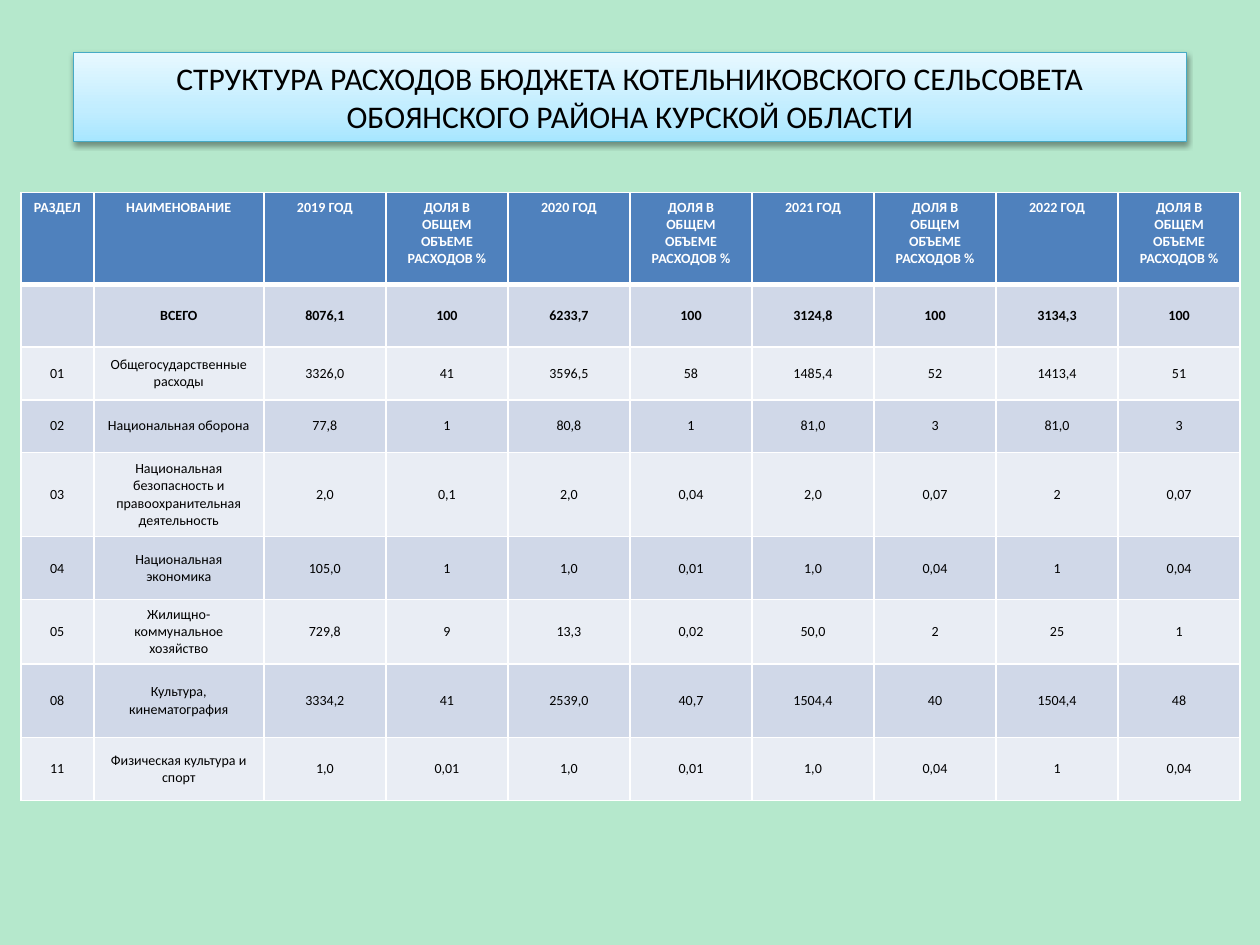
from lxml.etree import SubElement
from pptx import Presentation
from pptx.dml.color import RGBColor
from pptx.enum.text import MSO_ANCHOR, MSO_AUTO_SIZE, PP_ALIGN
from pptx.oxml import parse_xml
from pptx.oxml.ns import nsdecls, qn
from pptx.util import Cm, Pt

MINT = RGBColor(0xB5, 0xE8, 0xCC)
TEAL = RGBColor(0x46, 0xAA, 0xC5)
BLUE = RGBColor(0x4F, 0x81, 0xBD)
DARK = RGBColor(0xD0, 0xD8, 0xE8)
PALE = RGBColor(0xE9, 0xED, 0xF4)
BLACK = RGBColor(0, 0, 0)
WHITE = RGBColor(0xFF, 0xFF, 0xFF)
GLOW = [(0, RGBColor(0xA7, 0xE6, 0xFF)), (35, RGBColor(0xC1, 0xED, 0xFF)),
        (100, RGBColor(0xE7, 0xF8, 0xFF))]

TITLE = ("СТРУКТУРА РАСХОДОВ БЮДЖЕТА КОТЕЛЬНИКОВСКОГО СЕЛЬСОВЕТА "
         "ОБОЯНСКОГО РАЙОНА КУРСКОЙ ОБЛАСТИ")
SHARE = "ДОЛЯ В ОБЩЕМ ОБЪЕМЕ РАСХОДОВ %"
HEAD = ["РАЗДЕЛ", "НАИМЕНОВАНИЕ"]
for year in range(2019, 2023):
    HEAD += [f"{year} ГОД", SHARE]
ROWS = [
    HEAD,
    ["", "ВСЕГО", "8076,1", "100", "6233,7", "100", "3124,8", "100", "3134,3", "100"],
    ["01", "Общегосударственные расходы",
     "3326,0", "41", "3596,5", "58", "1485,4", "52", "1413,4", "51"],
    ["02", "Национальная оборона",
     "77,8", "1", "80,8", "1", "81,0", "3", "81,0", "3"],
    ["03", "Национальная безопасность и правоохранительная деятельность",
     "2,0", "0,1", "2,0", "0,04", "2,0", "0,07", "2", "0,07"],
    ["04", "Национальная экономика",
     "105,0", "1", "1,0", "0,01", "1,0", "0,04", "1", "0,04"],
    ["05", "Жилищно-коммунальное хозяйство",
     "729,8", "9", "13,3", "0,02", "50,0", "2", "25", "1"],
    ["08", "Культура, кинематография",
     "3334,2", "41", "2539,0", "40,7", "1504,4", "40", "1504,4", "48"],
    ["11", "Физическая культура и спорт",
     "1,0", "0,01", "1,0", "0,01", "1,0", "0,04", "1", "0,04"],
]
WIDTHS = [1.47, 3.43] + [2.46] * 8
HEIGHTS = [1.85, 1.27, 1.06, 1.06, 1.7, 1.27, 1.27, 1.48, 1.27]


class Deck:
    font = "Calibri"

    def __init__(self, width, height):
        self.prs = Presentation()
        self.prs.slide_width, self.prs.slide_height = Cm(width), Cm(height)
        self.slide = self.prs.slides.add_slide(self.prs.slide_layouts[5])
        fill = self.slide.background.fill
        fill.solid()
        fill.fore_color.rgb = MINT

    def label(self, frame, text, size, color, bold=False):
        frame.text = text
        para = frame.paragraphs[0]
        para.alignment = PP_ALIGN.CENTER
        para.font.name, para.font.size = self.font, Pt(size)
        para.font.bold, para.font.color.rgb = bold, color

    def title(self, text, left, top, width, height):
        box = self.slide.shapes.title
        box.left, box.top = Cm(left), Cm(top)
        box.width, box.height = Cm(width), Cm(height)
        self.shade(box)
        box.line.color.rgb, box.line.width = TEAL, Pt(0.75)
        self.label(box.text_frame, text, 18, BLACK)
        box.text_frame.auto_size = MSO_AUTO_SIZE.NONE

    def shade(self, box):
        """Give the box an upward gradient and a soft drop shadow."""
        stops = "".join(f'<a:gs pos="{pos * 1000}"><a:srgbClr val="{color}"/></a:gs>'
                        for pos, color in GLOW)
        props = box.element.spPr
        props.append(parse_xml(
            f'<a:gradFill {nsdecls("a")} rotWithShape="1"><a:gsLst>{stops}</a:gsLst>'
            '<a:lin ang="16200000" scaled="0"/></a:gradFill>'))
        props.append(parse_xml(
            f'<a:effectLst {nsdecls("a")}><a:outerShdw blurRad="40000" dist="20000" '
            'dir="5400000" rotWithShape="0"><a:srgbClr val="000000">'
            '<a:alpha val="38000"/></a:srgbClr></a:outerShdw></a:effectLst>'))

    def table(self, rows, left, top, widths, heights):
        grid = self.slide.shapes.add_table(
            len(rows), len(widths), Cm(left), Cm(top),
            Cm(sum(widths)), Cm(sum(heights))).table
        for col, width in zip(grid.columns, widths):
            col.width = Cm(width)
        for row, height in zip(grid.rows, heights):
            row.height = Cm(height)
        for r, row in enumerate(rows):
            for c, text in enumerate(row):
                self.cell(grid.cell(r, c), text, r)

    def cell(self, cell, text, row):
        head = row == 0
        self.label(cell.text_frame, text, 8, WHITE if head else BLACK, row < 2)
        cell.vertical_anchor = MSO_ANCHOR.TOP if head else MSO_ANCHOR.MIDDLE
        self.border(cell, top=3 if row == 1 else 1, bottom=3 if head else 1)
        cell.fill.solid()
        cell.fill.fore_color.rgb = BLUE if head else DARK if row % 2 else PALE

    def border(self, cell, top, bottom):
        props = cell._tc.get_or_add_tcPr()
        for side, width in zip("LRTB", (1, 1, top, bottom)):
            line = SubElement(props, qn(f"a:ln{side}"), w=str(Pt(width)))
            fill = SubElement(line, qn("a:solidFill"))
            SubElement(fill, qn("a:srgbClr"), val=str(WHITE))

    def save(self):
        self.prs.save("out.pptx")


def main():
    deck = Deck(25.4, 19.05)
    deck.title(TITLE, 1.48, 1.06, 22.44, 1.8)
    deck.table(ROWS, 0.42, 3.88, WIDTHS, HEIGHTS)
    deck.save()


if __name__ == "__main__":
    main()
